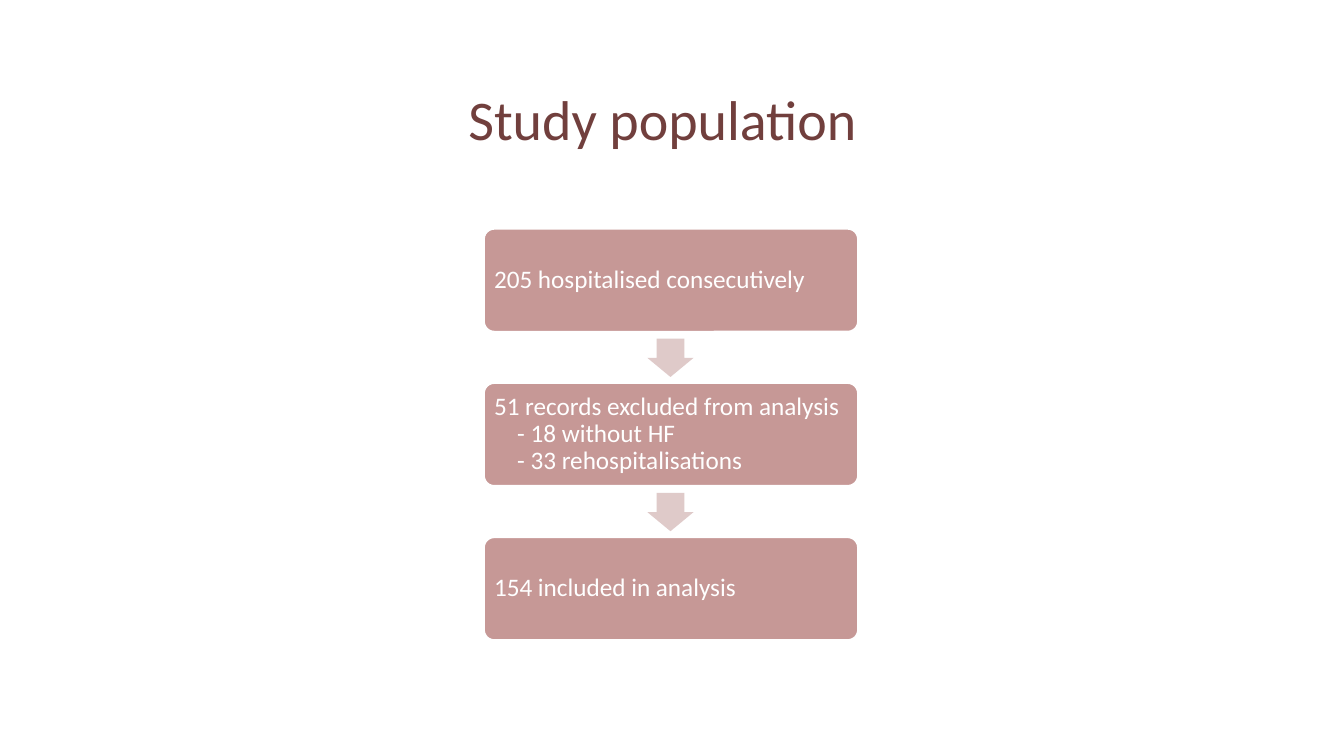
import pptx
import pptx.dml.color
import pptx.enum.shapes
import pptx.enum.text
import pptx.oxml
import pptx.oxml.ns
import pptx.util

EMU_PER_PX = 9144  # 100 px to the inch
SHAPES = pptx.enum.shapes.MSO_SHAPE
ALIGN = pptx.enum.text.PP_ALIGN
ANCHOR = pptx.enum.text.MSO_ANCHOR

TITLE_OUTLINE = """<a:ln %s w="9525"><a:solidFill><a:srgbClr val="404040">
<a:alpha val="10000"/></a:srgbClr></a:solidFill></a:ln>"""
TITLE_SHADOW = """<a:effectLst %s><a:outerShdw blurRad="38100" dist="25400"
dir="2700000" algn="tl"><a:srgbClr val="000000"><a:alpha val="45000"/></a:srgbClr>
</a:outerShdw></a:effectLst>"""


def px(length):
    return pptx.util.Emu(length * EMU_PER_PX)


def color(value):
    return pptx.dml.color.RGBColor.from_string(value)


def apply(target, **values):
    for name, value in values.items():
        setattr(target, name, value)


def effect(template):
    return pptx.oxml.parse_xml(template % pptx.oxml.ns.nsdecls("a"))


class FlowSlide:
    font_name = "Calibri"
    title_color = "713F3D"
    box_color = "C69896"
    arrow_color = "DFCAC9"
    light_color = "FFFFFF"

    def __init__(self, presentation):
        self.slide = presentation.slides.add_slide(presentation.slide_layouts[5])

    def add_text(self, paragraph, text, size, text_color):
        run = paragraph.add_run()
        run.text = text
        apply(run.font, name=self.font_name, size=pptx.util.Pt(size))
        run.font.color.rgb = color(text_color)
        return run

    def title(self, text, left, top, width, height):
        shape = self.slide.shapes.title
        apply(shape, left=px(left), top=px(top), width=px(width), height=px(height))
        shape.text_frame.vertical_anchor = ANCHOR.MIDDLE
        paragraph = shape.text_frame.paragraphs[0]
        paragraph.alignment = ALIGN.CENTER
        run = self.add_text(paragraph, text, 40, self.title_color)
        # Thin outline before the fill, soft shadow after it
        properties = run._r.get_or_add_rPr()
        fill = properties.find(pptx.oxml.ns.qn("a:solidFill"))
        fill.addprevious(effect(TITLE_OUTLINE))
        fill.addnext(effect(TITLE_SHADOW))

    def shape(self, kind, left, top, width, height, fill_color, adjustments):
        shape = self.slide.shapes.add_shape(
            kind, px(left), px(top), px(width), px(height))
        for index, value in enumerate(adjustments):
            shape.adjustments[index] = value
        shape.shadow.inherit = False
        shape.fill.solid()
        shape.fill.fore_color.rgb = color(fill_color)
        return shape

    def box(self, lines, left, top, width, height):
        shape = self.shape(SHAPES.ROUNDED_RECTANGLE, left, top, width, height,
                           self.box_color, [0.1])
        shape.line.color.rgb = color(self.light_color)
        shape.line.width = pptx.util.Pt(1.25)
        frame = shape.text_frame
        apply(frame, word_wrap=True, vertical_anchor=ANCHOR.MIDDLE,
              margin_left=px(7), margin_right=px(7),
              margin_top=px(7), margin_bottom=px(7))
        for index, line in enumerate(lines):
            paragraph = frame.add_paragraph() if index else frame.paragraphs[0]
            apply(paragraph, alignment=ALIGN.LEFT, line_spacing=0.9)
            if index:  # detail lines are indented
                paragraph._p.get_or_add_pPr().set("marL", str(px(23)))
            self.add_text(paragraph, line, 18, self.light_color)

    def arrow(self, left, top, width, height):
        shape = self.shape(SHAPES.DOWN_ARROW, left, top, width, height,
                           self.arrow_color, [0.6, 0.5])
        shape.line.fill.background()


def main():
    presentation = pptx.Presentation()
    apply(presentation, slide_width=px(1333), slide_height=px(750))
    flow = FlowSlide(presentation)

    # Title
    flow.title("Study population", 91, 48, 1132, 138)

    # Boxes from top to bottom, with an arrow centred in each gap
    steps = [
        ["205 hospitalised consecutively"],
        ["51 records excluded from analysis", "- 18 without HF",
         "- 33 rehospitalisations"],
        ["154 included in analysis"],
    ]
    left, first_top, width, height, gap = 480, 227, 371, 102, 51
    arrow_width, arrow_height = 46, 38
    for index, lines in enumerate(steps):
        top = first_top + index * (height + gap)
        if index:
            flow.arrow(left + (width - arrow_width) // 2,
                       top - (gap + arrow_height) // 2, arrow_width, arrow_height)
        flow.box(lines, left, top, width, height)

    presentation.save("out.pptx")


if __name__ == "__main__":
    main()
